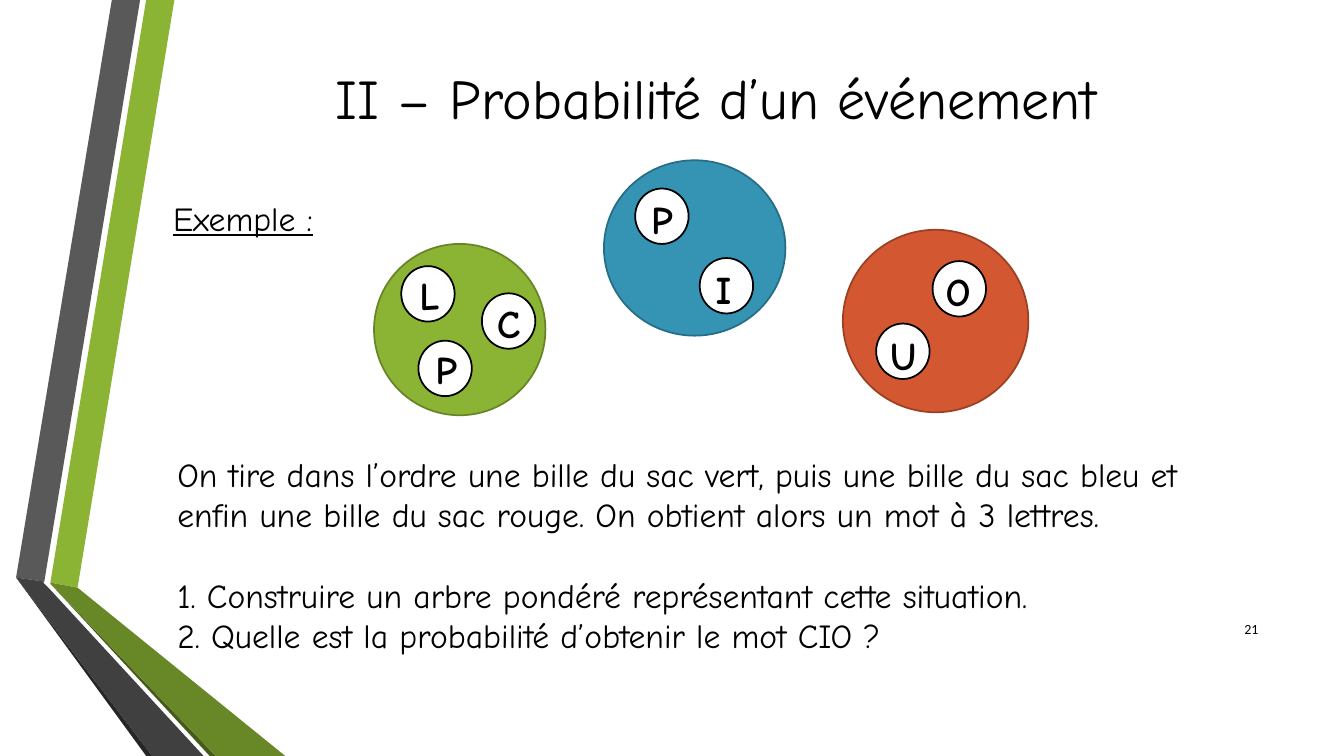
from dataclasses import dataclass
from pptx import Presentation
from pptx import util as u
from pptx.dml import color
from pptx.enum import shapes, text


@dataclass(frozen=True)
class Theme:
    font: str = "Comic Neue"
    plain: str = "Calibri"
    black: str = "000000"
    white: str = "FFFFFF"
    green: str = "8BB434"
    blue: str = "3594B4"
    red: str = "D35731"
    head: int = 40
    ball: int = 28
    body: int = 24
    note: int = 10


look = Theme()
deck = Presentation()
deck.slide_width, deck.slide_height = u.Inches(13.33), u.Inches(7.5)
slide = deck.slides.add_slide(deck.slide_layouts[5])
draw = slide.shapes


def paint(shape, fill, line=None):
    shape.shadow.inherit = False
    shape.fill.solid()
    shape.fill.fore_color.rgb = color.RGBColor.from_string(fill)
    if line:
        shape.line.color.rgb = color.RGBColor.from_string(line)
        shape.line.width = u.Pt(1.25)
    else:
        shape.line.fill.background()


def write(para, words, size, font=look.font, bold=False, under=False):
    run = para.add_run()
    run.text = words
    run.font.size = u.Pt(size)
    run.font.name = font
    run.font.bold = bold
    run.font.underline = under
    run.font.color.rgb = color.RGBColor.from_string(look.black)


bands = [
    (look.green, [(0.5, 5.78), (0.77, 5.83), (1.73, 0), (1.45, 0)]),
    ("595959", [(1.39, 0), (1.11, 0), (0.16, 5.73), (0.44, 5.77)]),
    ("262626", [(0.16, 5.73), (1.45, 7.5), (1.51, 7.5)]),
    ("465A1A", [(0.5, 5.79), (2.08, 7.5), (2.14, 7.5)]),
    ("688727", [(0.5, 5.79), (2.14, 7.5), (2.83, 7.5), (0.77, 5.83), (0.5, 5.78)]),
    ("404040", [(2.02, 7.5), (0.48, 5.83), (0.43, 5.78), (0.44, 5.77),
                (0.16, 5.73), (1.51, 7.5)]),
]
for fill, spots in bands:
    spots = [(u.Inches(x), u.Inches(y)) for x, y in spots]
    pen = draw.build_freeform(*spots[0])
    pen.add_line_segments(spots[1:], close=True)
    paint(pen.convert_to_shape(), fill)

title = draw.title
title.left, title.top = u.Inches(1.62), u.Inches(0)
title.width, title.height = u.Inches(10.96), u.Inches(1.92)
frame = title.text_frame
frame.auto_size = text.MSO_AUTO_SIZE.NONE
frame.vertical_anchor = text.MSO_ANCHOR.MIDDLE
frame.paragraphs[0].alignment = text.PP_ALIGN.CENTER
write(frame.paragraphs[0], "II – Probabilité d’un événement", look.head)

box = draw.add_textbox(u.Inches(11.98), u.Inches(6.04), u.Inches(0.6), u.Inches(0.4))
frame = box.text_frame
frame.word_wrap = True
frame.vertical_anchor = text.MSO_ANCHOR.MIDDLE
frame.paragraphs[0].alignment = text.PP_ALIGN.RIGHT
write(frame.paragraphs[0], "21", look.note, look.plain)

box = draw.add_textbox(u.Inches(1.62), u.Inches(1.91), u.Inches(10.96), u.Inches(0.5))
box.text_frame.word_wrap = True
write(box.text_frame.paragraphs[0], "Exemple :", look.body, under=True)

box = draw.add_textbox(u.Inches(1.66), u.Inches(4.45), u.Inches(10.88), u.Inches(2.12))
frame = box.text_frame
frame.word_wrap = True
write(frame.paragraphs[0],
      "On tire dans l’ordre une bille du sac vert, puis une bille du sac bleu et "
      "enfin une bille du sac rouge. On obtient alors un mot à 3 lettres.", look.body)
tasks = [
    ("1. Construire un arbre pondéré représentant cette situation.", 29),
    ("2. Quelle est la probabilité d’obtenir le mot CIO ?", 0),
]
for words, gap in tasks:
    para = frame.add_paragraph()
    para.space_before = u.Pt(gap)
    write(para, words, look.body)

bags = [
    (3.71, 2.42, 1.7, 1.7, look.green, "678526"),
    (5.99, 1.59, 1.8, 1.74, look.blue, "276D85"),
    (8.36, 2.28, 1.84, 1.81, look.red, "9C4024"),
]
for x, y, wide, high, fill, line in bags:
    bag = draw.add_shape(shapes.MSO_SHAPE.OVAL, u.Inches(x), u.Inches(y),
                         u.Inches(wide), u.Inches(high))
    paint(bag, fill, line)

balls = [
    ("L", 3.98, 2.64, 4.06, 2.64),
    ("C", 4.78, 2.91, 4.83, 2.92),
    ("P", 4.15, 3.38, 4.22, 3.38),
    ("P", 6.3, 1.87, 6.36, 1.89),
    ("I", 6.94, 2.56, 7, 2.58),
    ("O", 9.25, 2.59, 9.28, 2.6),
    ("U", 8.69, 3.21, 8.73, 3.24),
]
for mark, x, y, left, top in balls:
    ball = draw.add_shape(shapes.MSO_SHAPE.OVAL, u.Inches(x), u.Inches(y),
                          u.Inches(0.53), u.Inches(0.55))
    paint(ball, look.white, look.black)
    box = draw.add_textbox(u.Inches(left), u.Inches(top), u.Inches(0.52), u.Inches(0.57))
    box.text_frame.word_wrap = True
    write(box.text_frame.paragraphs[0], mark, look.ball, bold=True)

deck.save("out.pptx")
